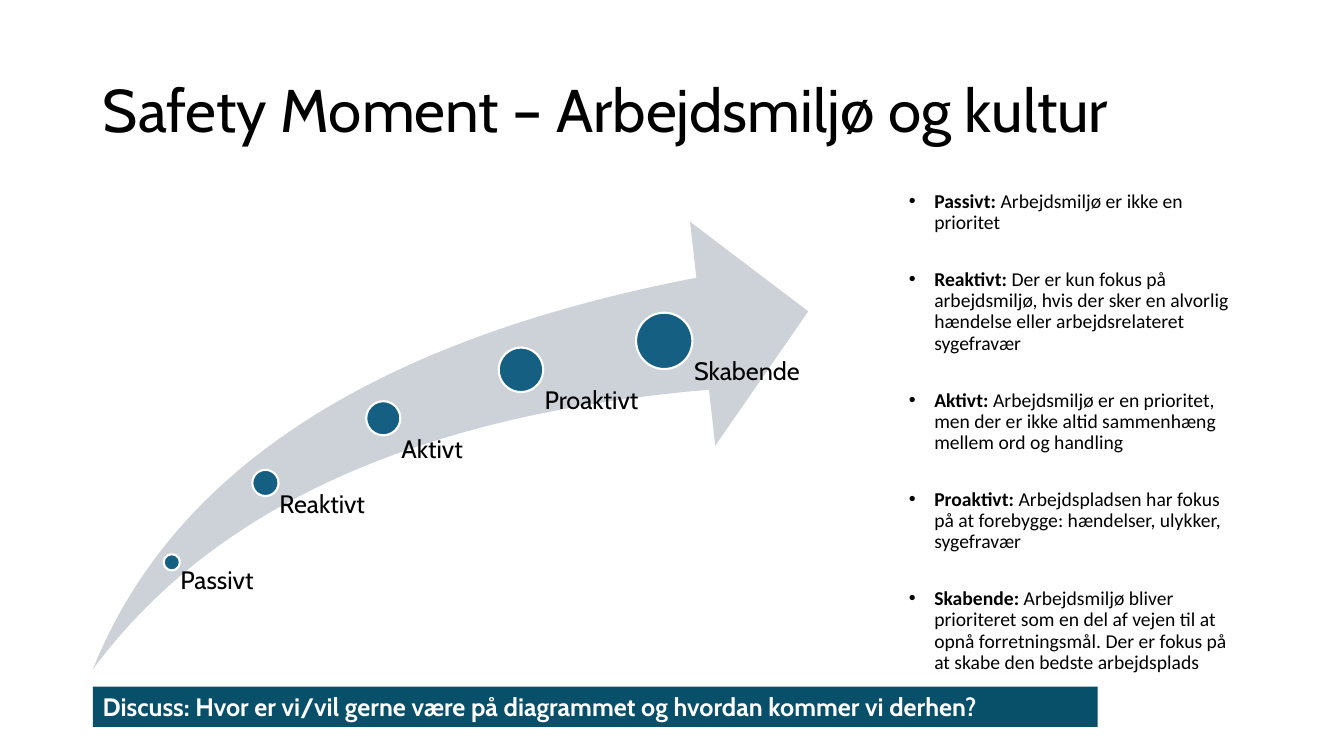
from pptx import Presentation
from pptx.dml.color import RGBColor
from pptx.enum.shapes import MSO_SHAPE as Kind
from pptx.enum.text import MSO_ANCHOR as Anchor, MSO_AUTO_SIZE as Fit, PP_ALIGN as Align
from pptx.util import Cm, Pt
from lxml.etree import SubElement
from pptx.oxml.ns import qn

hue = RGBColor.from_string


def fill(para, text, size, face, color, bold=False):
    run = para.add_run()
    run.text = text
    look = {"size": Pt(size), "name": face, "bold": bold}
    for key, val in look.items():
        setattr(run.font, key, val)
    run.font.color.rgb = hue(color)


def draw(kind, box, color):
    shape = slide.shapes.add_shape(kind, *map(Cm, box))
    shape.shadow.inherit = False
    shape.fill.solid()
    shape.fill.fore_color.rgb = hue(color)
    shape.line.fill.background()
    return shape


deck = Presentation()
deck.slide_width, deck.slide_height = Cm(33.87), Cm(19.05)
slide = deck.slides.add_slide(deck.slide_layouts[1])
title, body = slide.placeholders

spots = [
    (title, (2.34, 1.02, 29.21, 3.68), Anchor.MIDDLE),
    (body, (21.39, 4.7, 10.16, 13.23), Anchor.TOP),
]
for holder, box, anchor in spots:
    for key, val in zip(("left", "top", "width", "height"), box):
        setattr(holder, key, Cm(val))
    frame = {"word_wrap": True, "auto_size": Fit.NONE, "vertical_anchor": anchor}
    for key, val in frame.items():
        setattr(holder.text_frame, key, val)

para = title.text_frame.paragraphs[0]
para.alignment, para.line_spacing = Align.LEFT, 0.9
fill(para, "Safety Moment – Arbejdsmiljø og kultur", 43, "Cabin", "000000")

arrow = draw(Kind.SWOOSH_ARROW, (2.34, 5.59, 18.03, 11.28), "CCD2D8")
arrow.adjustments[0] = arrow.adjustments[1] = 0.25

steps = [
    ("Passivt", 4.33, 14.17, 0.41, 14.3, 2.36, 2.69),
    ("Reaktivt", 6.69, 12.17, 0.66, 12.4, 3, 4.72),
    ("Aktivt", 9.66, 10.54, 0.86, 11, 3.48, 6.32),
    ("Proaktivt", 13.13, 9.32, 1.12, 9.78, 3.61, 7.54),
    ("Skabende", 16.74, 8.59, 1.42, 9.04, 3.61, 8.28),
]
for name, x, y, size, top, wide, high in steps:
    dot = draw(Kind.OVAL, (x - size / 2, y - size / 2, size, size), "156082")
    dot.line.color.rgb = hue("FFFFFF")
    dot.line.width = Pt(1.5)
    label = slide.shapes.add_textbox(Cm(x), Cm(top), Cm(wide), Cm(high)).text_frame
    frame = {"word_wrap": True, "margin_left": Cm(size * 0.53),
             "margin_top": 0, "margin_right": 0, "margin_bottom": 0}
    for key, val in frame.items():
        setattr(label, key, val)
    para = label.paragraphs[0]
    para.line_spacing = 0.9
    fill(para, name, 18, "Cabin", "000000")

notes = [
    "Arbejdsmiljø er ikke en prioritet",
    "Der er kun fokus på arbejdsmiljø, hvis der sker en alvorlig hændelse eller arbejdsrelateret sygefravær",
    "Arbejdsmiljø er en prioritet, men der er ikke altid sammenhæng mellem ord og handling",
    "Arbejdspladsen har fokus på at forebygge: hændelser, ulykker, sygefravær",
    "Arbejdsmiljø bliver prioriteret som en del af vejen til at opnå forretningsmål. "
    "Der er fokus på at skabe den bedste arbejdsplads",
]
for i, (step, note) in enumerate(zip(steps, notes)):
    para = body.text_frame.add_paragraph() if i else body.text_frame.paragraphs[0]
    props = para._p.get_or_add_pPr()
    props.set("marL", str(Cm(1.9)))
    props.set("indent", str(-Cm(0.64)))
    SubElement(props, qn("a:buChar"), char="•")
    gaps = {"line_spacing": 0.9, "space_before": Pt(25.5 if i else 0), "space_after": Pt(0)}
    for key, val in gaps.items():
        setattr(para, key, val)
    fill(para, step[0] + ":", 14, "Calibri", "000000", True)
    fill(para, " " + note, 14, "Calibri", "000000")

bar = draw(Kind.RECTANGLE, (2.34, 17.3, 25.32, 1.02), "084F6A")
para = bar.text_frame.paragraphs[0]
para.alignment = Align.LEFT
fill(para, "Discuss: Hvor er vi/vil gerne være på diagrammet og hvordan kommer vi derhen?",
     18, "Cabin", "FFFFFF", True)

deck.save("out.pptx")
